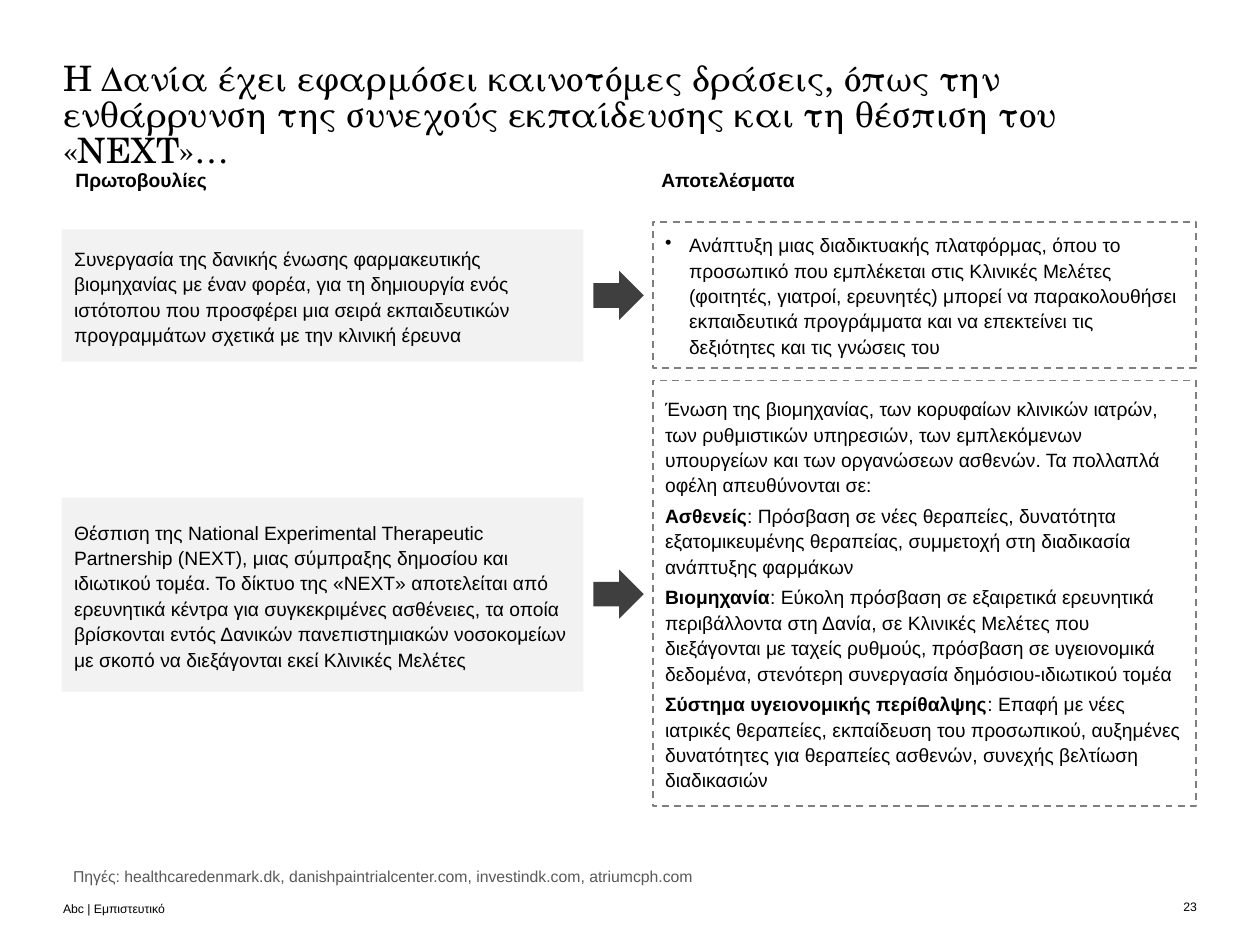
"""Build the slide on Denmark's clinical research initiatives and their results."""
from dataclasses import dataclass

from lxml import etree
from pptx import Presentation
from pptx.dml.color import RGBColor
from pptx.enum import dml, shapes, text
from pptx.oxml import ns
from pptx.util import Inches, Pt


@dataclass(frozen=True)
class Theme:
    ink: str = "000000"
    muted: str = "595959"
    panel: str = "F2F2F2"
    paper: str = "FFFFFF"
    edge: str = "7F7F7F"
    arrow: str = "3F3F3F"
    serif: str = "TeX Gyre Schola"
    sans: str = "Arial"
    head: float = 20
    main: float = 11
    note: float = 9
    foot: float = 7


theme = Theme()


def write(shape, paras, size=theme.main, color=theme.ink, face=theme.sans, bold=False,
          pads=(0.1, 0.05, 0.1, 0.05), anchor=text.MSO_ANCHOR.MIDDLE,
          align=text.PP_ALIGN.LEFT, pitch=1.0, gap=0, mark=None, hang=0):
    frame = shape.text_frame
    frame.word_wrap = True
    frame.auto_size = text.MSO_AUTO_SIZE.NONE
    frame.vertical_anchor = anchor
    frame.margin_left, frame.margin_top, frame.margin_right, frame.margin_bottom = map(Inches, pads)
    for i, (lead, rest) in enumerate(paras):
        para = frame.add_paragraph() if i else frame.paragraphs[0]
        props = para._p.get_or_add_pPr()
        props.set("marL", str(Inches(hang)))
        props.set("indent", str(-Inches(hang)))
        if mark:
            etree.SubElement(props, ns.qn("a:buChar")).set("char", mark)
        else:
            etree.SubElement(props, ns.qn("a:buNone"))
        para.alignment = align
        para.line_spacing = pitch
        para.space_before = Pt(gap if i else 0)
        font = para.font
        font.name, font.size, font.bold = face, Pt(size), bold
        font.color.rgb = RGBColor.from_string(color)
        if lead:
            para.add_run().text = lead
            para.runs[0].font.bold = True
        para.add_run().text = rest


def block(kind, box, fill, edge=None):
    shape = slide.shapes.add_shape(kind, *map(Inches, box))
    shape.shadow.inherit = False
    shape.fill.solid()
    shape.fill.fore_color.rgb = RGBColor.from_string(fill)
    if edge:
        shape.line.color.rgb = RGBColor.from_string(edge)
        shape.line.width = Pt(1)
        shape.line.dash_style = dml.MSO_LINE.DASH
    else:
        shape.line.fill.background()
    return shape


deck = Presentation()
deck.slide_width, deck.slide_height = Inches(10), Inches(7.5)
slide = deck.slides.add_slide(deck.slide_layouts[1])

title, source = slide.shapes.title, slide.placeholders[1]
for item, box in ((title, (0.5, 0.5, 9, 0.51)), (source, (0.5, 6.86, 9, 0.19))):
    item.left, item.top, item.width, item.height = map(Inches, box)
write(title, [("", "Η Δανία έχει εφαρμόσει καινοτόμες δράσεις, όπως την ενθάρρυνση της "
                   "συνεχούς εκπαίδευσης και τη θέσπιση του «NEXT»…")],
      size=theme.head, face=theme.serif, pads=(0, 0, 0, 0),
      anchor=text.MSO_ANCHOR.TOP, pitch=0.85)
write(source, [("", "Πηγές: healthcaredenmark.dk, danishpaintrialcenter.com, "
                    "investindk.com, atriumcph.com")],
      size=theme.note, color=theme.muted, pads=(0.08, 0, 0, 0))

for label, left, width in (("Πρωτοβουλίες", 0.5, 3.16), ("Αποτελέσματα", 5.15, 2.36)):
    box = slide.shapes.add_textbox(Inches(left), Inches(1.29), Inches(width), Inches(0.28))
    write(box, [("", label)], bold=True)

rows = [
    {
        "left": (1.82, 1.05), "arrow": 2.15, "right": (1.76, 1.16),
        "action": "Συνεργασία της δανικής ένωσης φαρμακευτικής βιομηχανίας με έναν φορέα, "
                  "για τη δημιουργία ενός ιστότοπου που προσφέρει μια σειρά εκπαιδευτικών "
                  "προγραμμάτων σχετικά με την κλινική έρευνα",
        "result": [("", "Ανάπτυξη μιας διαδικτυακής πλατφόρμας, όπου το προσωπικό που "
                        "εμπλέκεται στις Κλινικές Μελέτες (φοιτητές, γιατροί, ερευνητές) "
                        "μπορεί να παρακολουθήσει εκπαιδευτικά προγράμματα και να "
                        "επεκτείνει τις δεξιότητες και τις γνώσεις του")],
        "mark": "•", "hang": 0.19,
    },
    {
        "left": (3.95, 1.54), "arrow": 4.52, "right": (3.02, 3.38),
        "action": "Θέσπιση της National Experimental Therapeutic Partnership (NEXT), μιας "
                  "σύμπραξης δημοσίου και ιδιωτικού τομέα. Το δίκτυο της «NEXT» αποτελείται "
                  "από ερευνητικά κέντρα για συγκεκριμένες ασθένειες, τα οποία βρίσκονται "
                  "εντός Δανικών πανεπιστημιακών νοσοκομείων με σκοπό να διεξάγονται εκεί "
                  "Κλινικές Μελέτες",
        "result": [
            ("", "Ένωση της βιομηχανίας, των κορυφαίων κλινικών ιατρών, των ρυθμιστικών "
                 "υπηρεσιών, των εμπλεκόμενων υπουργείων και των οργανώσεων ασθενών. Τα "
                 "πολλαπλά οφέλη απευθύνονται σε:"),
            ("Ασθενείς", ": Πρόσβαση σε νέες θεραπείες, δυνατότητα εξατομικευμένης "
                         "θεραπείας, συμμετοχή στη διαδικασία ανάπτυξης φαρμάκων"),
            ("Βιομηχανία", ": Εύκολη πρόσβαση σε εξαιρετικά ερευνητικά περιβάλλοντα στη "
                           "Δανία, σε Κλινικές Μελέτες που διεξάγονται με ταχείς ρυθμούς, "
                           "πρόσβαση σε υγειονομικά δεδομένα, στενότερη συνεργασία "
                           "δημόσιου-ιδιωτικού τομέα"),
            ("Σύστημα υγειονομικής περίθαλψης",
             ": Επαφή με νέες ιατρικές θεραπείες, εκπαίδευση του προσωπικού, αυξημένες "
             "δυνατότητες για θεραπείες ασθενών, συνεχής βελτίωση διαδικασιών"),
        ],
        "mark": None, "hang": 0,
    },
]
rect, arrow = shapes.MSO_SHAPE.RECTANGLE, shapes.MSO_SHAPE.RIGHT_ARROW
for row in rows:
    top, height = row["left"]
    write(block(rect, (0.49, top, 4.14, height), theme.panel), [("", row["action"])], pitch=1.1)
    block(arrow, (4.71, row["arrow"], 0.4, 0.39), theme.arrow)
    top, height = row["right"]
    write(block(rect, (5.18, top, 4.31, height), theme.paper, theme.edge), row["result"],
          pitch=1.1, gap=3, mark=row["mark"], hang=row["hang"])

for label, left, width, align, anchor in (
        ("Abc | Εμπιστευτικό", 0.5, 4.35, text.PP_ALIGN.LEFT, text.MSO_ANCHOR.BOTTOM),
        ("23", 9.29, 0.21, text.PP_ALIGN.RIGHT, text.MSO_ANCHOR.MIDDLE)):
    box = slide.shapes.add_textbox(Inches(left), Inches(7.12), Inches(width), Inches(0.15))
    write(box, [("", label)], size=theme.foot, pads=(0, 0, 0, 0), align=align, anchor=anchor)

deck.save("out.pptx")
